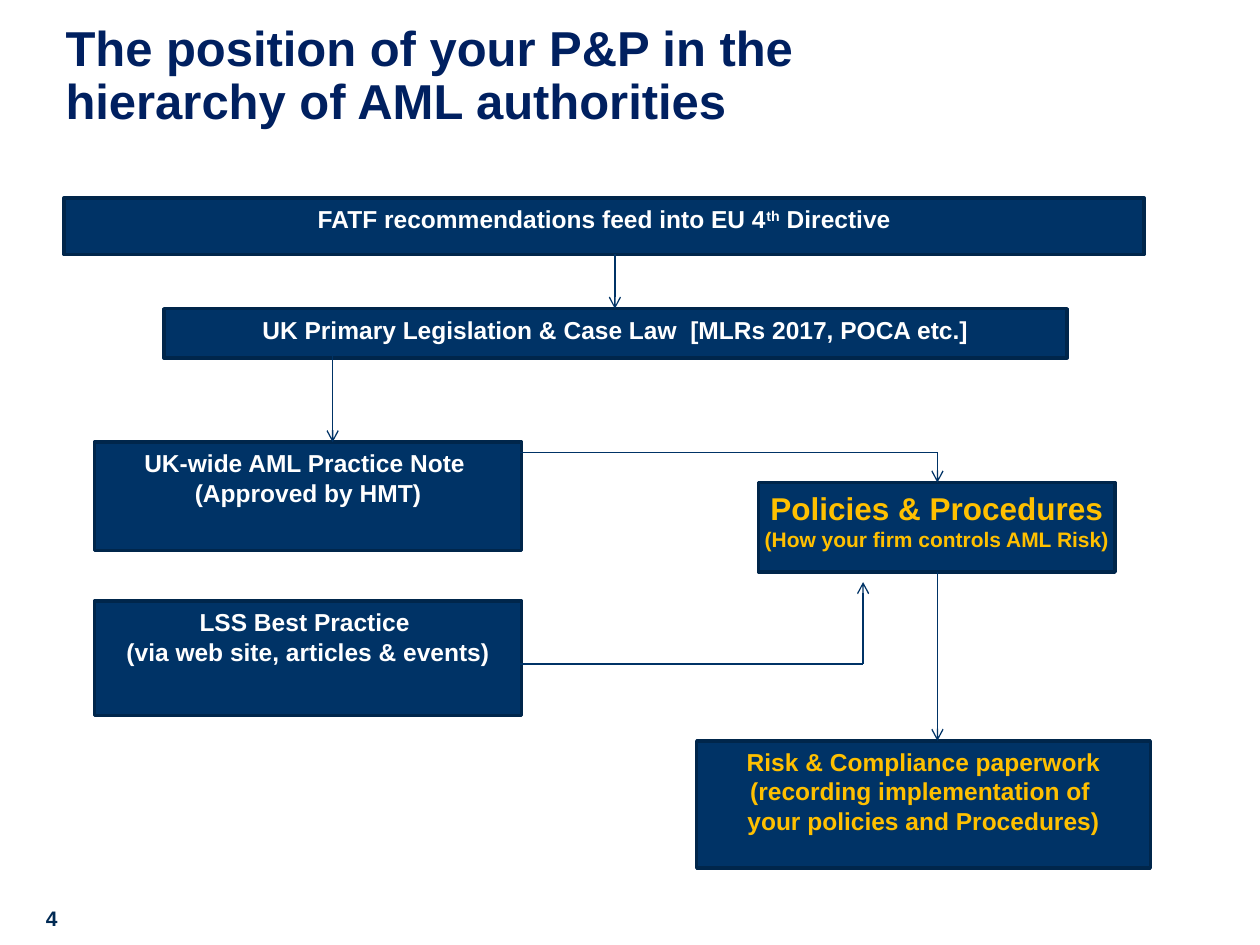
"""Build a slide showing where a firm's policies sit among AML authorities."""
from dataclasses import dataclass

import pptx
import pptx.dml.color
import pptx.enum.shapes
import pptx.enum.text
import pptx.oxml.ns
import pptx.slide
import pptx.text.text
import pptx.util
from lxml import etree

Inches = pptx.util.Inches
Pt = pptx.util.Pt
RGBColor = pptx.dml.color.RGBColor

NAVY = RGBColor(0x00, 0x33, 0x66)
DARK_NAVY = RGBColor(0x00, 0x26, 0x4B)
TITLE_BLUE = RGBColor(0x00, 0x20, 0x60)
NUMBER_BLUE = RGBColor(0x00, 0x2A, 0x54)
WHITE = RGBColor(0xFF, 0xFF, 0xFF)
GOLD = RGBColor(0xFF, 0xC0, 0x00)


@dataclass(frozen=True)
class Phrase:
    text: str
    size: int = 14
    superscript: bool = False


@dataclass(frozen=True)
class Authority:
    left: float
    top: float
    width: float
    height: float
    lines: tuple[tuple[Phrase, ...], ...]
    color: RGBColor = WHITE


@dataclass(frozen=True)
class Link:
    points: tuple[tuple[float, float], ...]


AUTHORITIES = (
    Authority(0.51, 1.57, 8.57, 0.45, (
        (Phrase("FATF recommendations feed into EU 4"),
         Phrase("th", superscript=True), Phrase(" Directive")),)),
    Authority(1.3, 2.45, 7.17, 0.39, (
        (Phrase("UK Primary Legislation & Case Law  [MLRs 2017, POCA etc.]"),),)),
    Authority(0.75, 3.51, 3.39, 0.86, (
        (Phrase("UK-wide AML Practice Note "),), (Phrase("(Approved by HMT)"),))),
    Authority(0.75, 4.77, 3.39, 0.91, (
        (Phrase("LSS Best Practice "),),
        (Phrase("(via web site, articles & events)"),))),
    Authority(6.02, 3.83, 2.83, 0.71, (
        (Phrase("Policies & Procedures", 18),),
        (Phrase("(How your firm controls AML Risk)", 12),)), GOLD),
    Authority(5.53, 5.88, 3.6, 1.01, (
        (Phrase("Risk & Compliance paperwork"),),
        (Phrase("(recording implementation of "),),
        (Phrase("your policies and Procedures)"),)), GOLD),
)

LINKS = (
    Link(((4.88, 2.02), (4.88, 2.45))),
    Link(((2.64, 2.73), (2.64, 3.51))),
    Link(((4.13, 3.59), (7.44, 3.59), (7.44, 3.83))),
    Link(((7.44, 4.54), (7.44, 5.88))),
    Link(((4.09, 5.27), (6.85, 5.27), (6.85, 4.62))),
)


def style_font(font: pptx.text.text.Font, size: int, color: RGBColor) -> None:
    font.name = "Arial"
    font.size = Pt(size)
    font.bold = True
    font.color.rgb = color


def add_title(slide: pptx.slide.Slide, wording: str) -> None:
    title = slide.shapes.title
    title.left, title.top = Inches(0.42), Inches(0.29)
    title.width, title.height = Inches(7.41), Inches(0.79)
    frame = title.text_frame
    frame.text = wording
    frame.auto_size = pptx.enum.text.MSO_AUTO_SIZE.NONE
    frame.vertical_anchor = pptx.enum.text.MSO_ANCHOR.BOTTOM
    heading = frame.paragraphs[0]
    heading.alignment = pptx.enum.text.PP_ALIGN.LEFT
    heading.line_spacing = 0.9
    style_font(heading.runs[0].font, 28, TITLE_BLUE)


def add_authority(slide: pptx.slide.Slide, authority: Authority) -> None:
    box = slide.shapes.add_shape(
        pptx.enum.shapes.MSO_SHAPE.RECTANGLE,
        Inches(authority.left), Inches(authority.top),
        Inches(authority.width), Inches(authority.height))
    box.shadow.inherit = False
    box.fill.solid()
    box.fill.fore_color.rgb = NAVY
    box.line.color.rgb = DARK_NAVY
    box.line.width = Pt(2)
    frame = box.text_frame
    frame.word_wrap = False
    frame.vertical_anchor = pptx.enum.text.MSO_ANCHOR.TOP
    for index, line in enumerate(authority.lines):
        paragraph = frame.add_paragraph() if index else frame.paragraphs[0]
        paragraph.alignment = pptx.enum.text.PP_ALIGN.CENTER
        for phrase in line:
            run = paragraph.add_run()
            run.text = phrase.text
            style_font(run.font, phrase.size, authority.color)
            if phrase.superscript:
                run._r.get_or_add_rPr().set("baseline", "30000")


def add_link(slide: pptx.slide.Slide, link: Link) -> None:
    for start, end in zip(link.points, link.points[1:]):
        segment = slide.shapes.add_connector(
            pptx.enum.shapes.MSO_CONNECTOR.STRAIGHT,
            *(Inches(value) for value in start + end))
        segment.line.color.rgb = NAVY
        segment.line.width = Pt(0.75)
        if end == link.points[-1]:
            etree.SubElement(segment.line._get_or_add_ln(),
                             pptx.oxml.ns.qn("a:tailEnd"), type="arrow")
        etree.SubElement(segment._element.spPr, pptx.oxml.ns.qn("a:effectLst"))


def add_page_number(slide: pptx.slide.Slide, number: str) -> None:
    box = slide.shapes.add_textbox(
        Inches(0.09), Inches(7.14), Inches(0.64), Inches(0.3))
    frame = box.text_frame
    frame.word_wrap = True
    frame.vertical_anchor = pptx.enum.text.MSO_ANCHOR.BOTTOM
    frame.text = number
    frame.paragraphs[0].alignment = pptx.enum.text.PP_ALIGN.CENTER
    style_font(frame.paragraphs[0].runs[0].font, 12, NUMBER_BLUE)


def main() -> None:
    presentation = pptx.Presentation()
    presentation.slide_width = Inches(10)
    presentation.slide_height = Inches(7.5)
    slide = presentation.slides.add_slide(presentation.slide_layouts[5])
    add_title(slide, "The position of your P&P in the hierarchy of AML authorities")
    for authority in AUTHORITIES:
        add_authority(slide, authority)
    for link in LINKS:
        add_link(slide, link)
    add_page_number(slide, "4")
    presentation.save("out.pptx")


if __name__ == "__main__":
    main()
